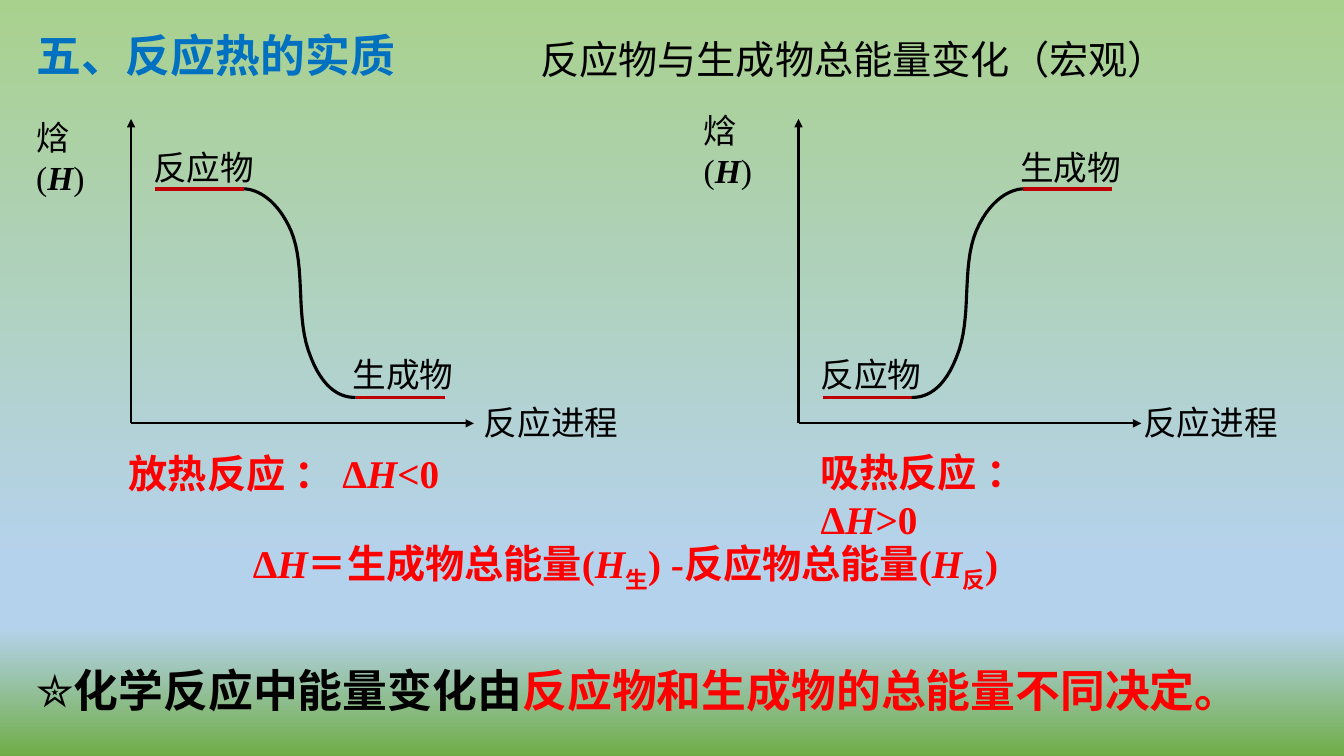
from lxml import etree
from pptx import Presentation
from pptx.dml.color import RGBColor
from pptx.enum.shapes import MSO_CONNECTOR as CONN
from pptx.enum.text import MSO_ANCHOR as ANCHOR, PP_ALIGN as ALIGN
from pptx.oxml.ns import qn
from pptx.util import Inches, Pt

SERIF, SANS = "Times New Roman", "Noto Sans CJK SC"
BLACK, RED, DARK_RED, BLUE = "000000", "FF0000", "C00000", "0070C0"
BACKGROUND = [(0, "A9D18E"), (74, "B5D2EC"), (83, "B5D2EC"), (100, "70AD47")]
# Bezier points of the falling curve, as shares of its box
CURVE = [(0, 0), (.06, 0), (.27, .02), (.42, .2), (.56, .38),
         (.45, .62), (.6, .81), (.74, 1), (.94, 1), (1, 1)]
STEPS = 16


def rgb(value):
    return RGBColor.from_string(value)


def set_background(s):
    fill = s.background.fill
    fill.gradient()
    fill.gradient_angle = 270
    stops = s._element.find(".//" + qn("a:gsLst"))
    for stop in list(stops):
        stops.remove(stop)
    for pos, color in BACKGROUND:
        gs = etree.SubElement(stops, qn("a:gs"), pos=str(pos * 1000))
        etree.SubElement(gs, qn("a:srgbClr"), val=color)


def write(sp, runs, size, color=BLACK, font=SERIF, bold=False, align=ALIGN.LEFT):
    """Fill a shape with (text, style) runs: i italic, b bold, s subscript, r red, n new line."""
    tf = sp.text_frame
    tf.word_wrap = True
    tf.vertical_anchor = ANCHOR.TOP
    p = tf.paragraphs[0]
    p.alignment = align
    for text, style in runs:
        if "n" in style:
            p.add_line_break()
        r = p.add_run()
        r.text = text
        r.font.size = Pt(size)
        r.font.name = font
        r.font.bold = bold or "b" in style
        r.font.italic = "i" in style
        r.font.color.rgb = rgb(RED if "r" in style else color)
        rPr = r._r.get_or_add_rPr()
        if "s" in style:
            rPr.set("baseline", "-25000")
        ea = etree.Element(qn("a:ea"), typeface=SANS)
        rPr.find(qn("a:latin")).addnext(ea)


def add_text(s, x, y, w, h, runs, size, **style):
    sp = s.shapes.add_textbox(Inches(x), Inches(y), Inches(w), Inches(h))
    write(sp, runs, size, **style)


def add_line(s, x1, y1, x2, y2, color, width, arrow=False):
    c = s.shapes.add_connector(CONN.STRAIGHT, Inches(x1), Inches(y1), Inches(x2), Inches(y2))
    c.line.color.rgb = rgb(color)
    c.line.width = Pt(width)
    if arrow:
        etree.SubElement(c.line._get_or_add_ln(), qn("a:tailEnd"), type="triangle")
    etree.SubElement(c._element.spPr, qn("a:effectLst"))


def bezier(a, b, c, d, t):
    u = 1 - t
    return tuple(u**3 * i + 3 * u * u * t * j + 3 * u * t * t * k + t**3 * m
                 for i, j, k, m in zip(a, b, c, d))


def add_curve(s, x, y, w, h, rising):
    points = [CURVE[0]]
    for k in range(0, len(CURVE) - 1, 3):
        points += [bezier(*CURVE[k:k + 4], n / STEPS) for n in range(1, STEPS + 1)]
    points = [(Inches(x + w * (1 - px if rising else px)), Inches(y + h * py))
              for px, py in points]
    builder = s.shapes.build_freeform(*points[0])
    builder.add_line_segments(points[1:], close=False)
    sp = builder.convert_to_shape()
    sp.fill.background()
    sp.line.color.rgb = rgb(BLACK)
    sp.line.width = Pt(2.25)
    sp.shadow.inherit = False


def energy_diagram(s, x, y, w, h, rising, enthalpy_y, progress_x):
    """Draw axes filling the box, two energy levels and the curve joining them."""
    bottom = y + h
    high, low = y + .23 * h, y + .915 * h
    start, end = (low, high) if rising else (high, low)
    level = .26 * w
    start_x, end_x = x + .07 * w, x + .655 * w

    add_line(s, x, bottom, x, y, BLACK, 1.5, arrow=True)
    add_line(s, x, bottom, x + w, bottom, BLACK, 1.5, arrow=True)
    for name, left, label_left, top in (("反应物", start_x, x + .12, start),
                                        ("生成物", end_x, x + 2.1, end)):
        add_line(s, left, top, left + level, top, DARK_RED, 2.25)
        lift = .47 if top == high else .48
        add_text(s, label_left, top - lift, 1.34, .5, [(name, "")], 24)
    add_curve(s, start_x + level, high, end_x - start_x - level, low - high, rising)
    add_text(s, x - 1.04, enthalpy_y, .91, .5, [("焓(", ""), ("H", "bi"), (")", "")], 24)
    add_text(s, progress_x, bottom - .26, 1.75, .5, [("反应进程", "")], 24)


def heading(s):
    title = s.shapes.title
    title.left, title.top, title.width, title.height = map(Inches, (.26, .22, 4.93, .64))
    write(title, [("五、反应热的实质", "")], 32, color=BLUE, font=SANS, bold=True)
    add_text(s, 5.26, .3, 6.6, .57, [("反应物与生成物总能量变化（宏观）", "")], 28, font=SANS)


def conclusions(s):
    red = dict(size=28, color=RED, bold=True)
    add_text(s, 1.18, 4.41, 3.63, .57,
             [("放热反应 ： Δ", ""), ("H", "i"), ("<0", "")], **red)
    add_text(s, 8.04, 4.4, 3.24, .57,
             [("吸热反应 ：", ""), ("Δ", "n"), ("H", "i"), (">0", "")], **red)
    add_text(s, 2.41, 5.3, 8.72, .57,
             [("Δ", ""), ("H", "i"), ("＝生成物总能量(", ""), ("H", "i"), ("生", "s"),
              (") -反应物总能量(", ""), ("H", "i"), ("反", "s"), (")", "")],
             align=ALIGN.JUSTIFY, **red)
    add_text(s, .26, 6.53, 13.07, .64,
             [("✮化学反应中能量变化由", ""), ("反应物和生成物的总能量不同决定。", "r")],
             32, font=SANS, bold=True)


def main():
    prs = Presentation()
    prs.slide_width, prs.slide_height = Inches(13.33), Inches(7.5)
    s = prs.slides.add_slide(prs.slide_layouts[5])
    set_background(s)
    heading(s)
    energy_diagram(s, 1.3, 1.18, 3.4, 3.02, False, enthalpy_y=1.11, progress_x=4.7)
    energy_diagram(s, 7.92, 1.18, 3.4, 3.02, True, enthalpy_y=1.04, progress_x=11.24)
    conclusions(s)
    prs.save("out.pptx")


if __name__ == "__main__":
    main()
